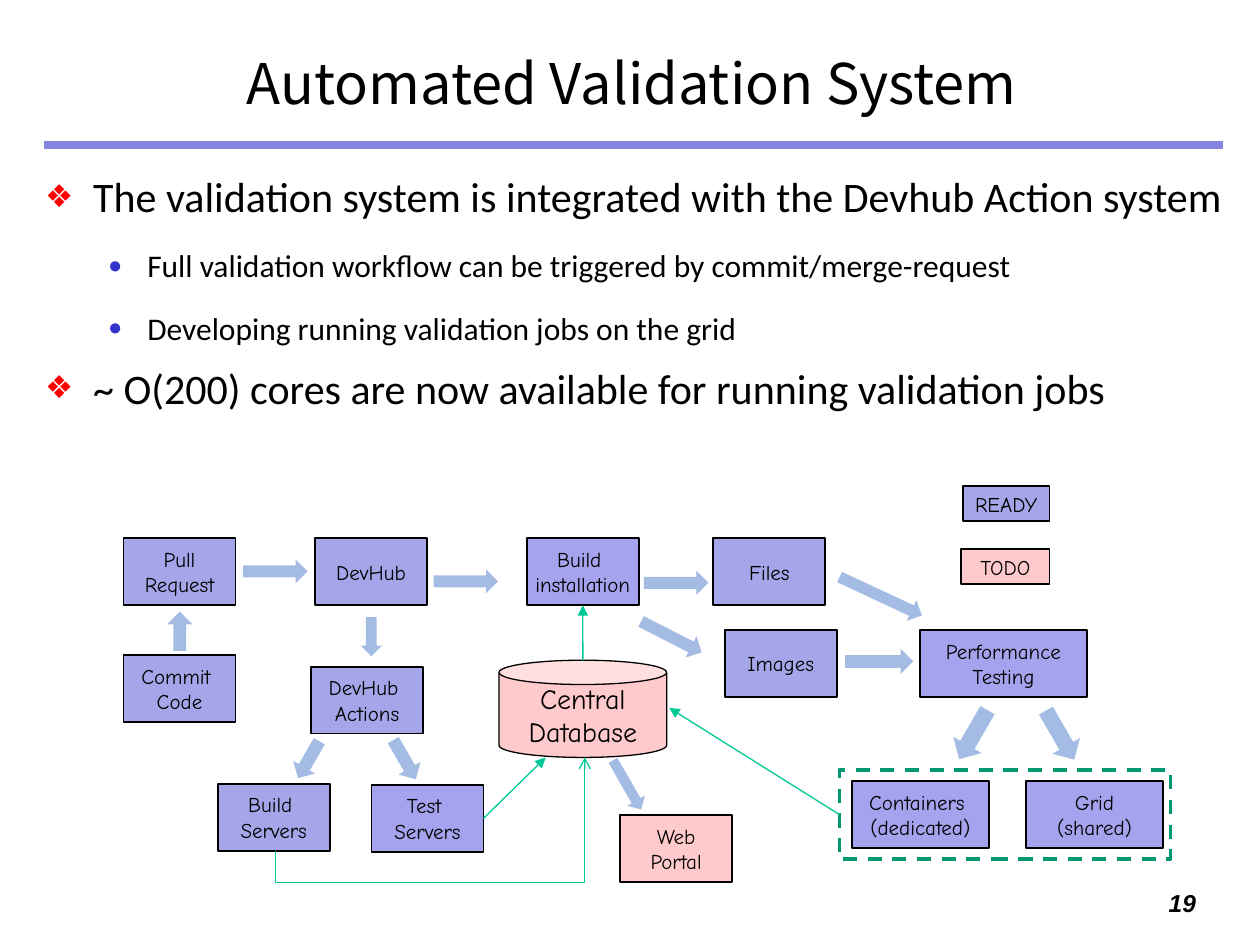
from lxml import etree
from pptx import Presentation
from pptx.dml.color import RGBColor
from pptx.enum.dml import MSO_LINE
from pptx.enum.shapes import MSO_CONNECTOR, MSO_SHAPE
from pptx.enum.text import MSO_ANCHOR, PP_ALIGN
from pptx.oxml.ns import qn
from pptx.util import Cm, Pt

RECT, CAN, ARROW = MSO_SHAPE.RECTANGLE, MSO_SHAPE.CAN, MSO_SHAPE.RIGHT_ARROW
LINE, ELBOW = MSO_CONNECTOR.STRAIGHT, MSO_CONNECTOR.ELBOW
TOP, MID, LOW = MSO_ANCHOR.TOP, MSO_ANCHOR.MIDDLE, MSO_ANCHOR.BOTTOM
LEFT, MIDST, RIGHT = PP_ALIGN.LEFT, PP_ALIGN.CENTER, PP_ALIGN.RIGHT

BLACK = RGBColor(0, 0, 0)
RULE = RGBColor(0x85, 0x85, 0xE0)
BLUE = RGBColor(0xA5, 0xA5, 0xE9)
VIOLET = RGBColor(0xA6, 0xA3, 0xEE)
PINK = RGBColor(0xFF, 0xCA, 0xCB)
SKY = RGBColor(0xA4, 0xBB, 0xE4)
GREEN = RGBColor(0x00, 0xC8, 0x96)
DARK = RGBColor(0x00, 0x97, 0x71)

# Content
TITLE = "Automated Validation System"
BODY = [  # level, space before, text
    (0, 0, "The validation system is integrated with the Devhub Action system"),
    (1, 12, "Full validation workflow can be triggered by commit/merge-request"),
    (1, 12, "Developing running validation jobs on the grid"),
    (0, 12, "~ O(200) cores are now available for running validation jobs"),
]
LEVELS = [
    dict(size=24, space=0.9, left=0.97, hang=0.97, mark="❖", color="FF0000"),
    dict(size=18, space=1.1, left=2.06, hang=0.79, mark="●", color="3333CC"),
]
W, H = 2.26, 1.35  # usual box size
ROW = 10.85        # top of the first row
BOXES = {  # name: lines, left, top, width, height, fill, line width
    "pull": (["Pull", "Request"], 2.49, ROW, W, H, BLUE, 1),
    "hub": (["DevHub"], 6.35, ROW, W, H, BLUE, 1),
    "build": (["Build ", "installation"], 10.62, ROW, W, H, VIOLET, 1),
    "files": (["Files"], 14.38, ROW, W, H, BLUE, 1),
    "code": (["Commit ", "Code"], 2.49, 13.21, W, H, BLUE, 1),
    "acts": (["DevHub ", "Actions"], 6.27, 13.44, W, H, BLUE, 1),
    "image": (["Images"], 14.61, 12.7, W, H, BLUE, 1),
    "perf": (["Performance", "Testing"], 18.54, 12.7, 3.38, H, VIOLET, 1),
    "make": (["Build ", "Servers"], 4.39, 15.8, W, H, BLUE, 1),
    "test": (["Test ", "Servers"], 7.49, 15.82, W, H, VIOLET, 1),
    "web": (["Web", "Portal"], 12.5, 16.43, W, H, PINK, 0.75),
    "pods": (["Containers ", "(dedicated)"], 17.17, 15.75, 2.77, H, VIOLET, 1),
    "grid": (["Grid", "(shared)"], 20.68, 15.75, 2.77, H, VIOLET, 1),
    "ready": (["READY"], 19.41, 9.8, 1.75, 0.71, BLUE, 1),
    "todo": (["TODO"], 19.38, 11.07, 1.78, 0.71, PINK, 1),
}
ARROWS = [  # left, top, width, height, turn
    (4.9, 11.28, 1.3, 0.48, 0),
    (8.74, 11.48, 1.3, 0.48, 0),
    (12.98, 11.51, 1.3, 0.48, 0),
    (17.04, 13.08, 1.37, 0.51, 0),
    (7.09, 12.62, 0.79, 0.43, 90),
    (3.23, 12.47, 0.79, 0.51, 270),
    (16.84, 11.79, 1.83, 0.46, 25),
    (12.85, 12.6, 1.37, 0.48, 27),
    (20.8, 14.5, 1.14, 0.64, 60),
    (19.05, 14.48, 1.14, 0.66, 120),
    (12.07, 15.62, 1.14, 0.41, 60),
    (5.79, 15.06, 0.86, 0.51, 120),
    (7.7, 15.06, 0.91, 0.51, 60),
]


def write(shape, lines, anchor, align, wrap=True, **font):
    frame = shape.text_frame
    frame.word_wrap, frame.vertical_anchor = wrap, anchor
    frame.text = "\n".join(lines)
    for para in frame.paragraphs:
        para.alignment = align
        run = para.runs[0]
        run.font.color.rgb = BLACK
        for key, value in font.items():
            setattr(run.font, key, value)
    return frame


def draw(kind, left, top, width, height, fill=None, line=None, weight=1):
    shape = slide.shapes.add_shape(kind, Cm(left), Cm(top), Cm(width), Cm(height))
    shape.shadow.inherit = False
    for part, color in ((shape.fill, fill), (shape.line.fill, line)):
        if color is None:
            part.background()
        else:
            part.solid()
            part.fore_color.rgb = color
    if line is not None:
        shape.line.width = Pt(weight)
    return shape


def link(x1, y1, x2, y2, color=GREEN, weight=0.75, tip="triangle", kind=LINE):
    wire = slide.shapes.add_connector(kind, Cm(x1), Cm(y1), Cm(x2), Cm(y2))
    wire.line.color.rgb, wire.line.width = color, Pt(weight)
    if tip:
        etree.SubElement(wire.line._get_or_add_ln(), qn("a:tailEnd"), type=tip)
    etree.SubElement(wire._element.spPr, qn("a:effectLst"))
    return wire


def bullet(para, left, hang, mark, color):
    props = para._p.get_or_add_pPr()
    props.set("marL", str(Cm(left)))
    props.set("indent", str(-Cm(hang)))
    tint = etree.SubElement(props, qn("a:buClr"))
    etree.SubElement(tint, qn("a:srgbClr"), val=color)
    etree.SubElement(props, qn("a:buSzPct"), val="75000")
    etree.SubElement(props, qn("a:buFont"), typeface="Arial")
    etree.SubElement(props, qn("a:buChar"), char=mark)


deck = Presentation()
deck.slide_width, deck.slide_height = Cm(25.4), Cm(19.05)
slide = deck.slides.add_slide(deck.slide_layouts[5])

# Title and rule
title = slide.shapes.title
title.left, title.top, title.width, title.height = Cm(0.86), Cm(0.64), Cm(23.77), Cm(1.83)
write(title, [TITLE], LOW, MIDST, size=Pt(32), name="Noto Sans CJK SC")
link(0.89, 2.92, 24.66, 2.92, RULE, 4.75, None)

# Bullets
body = slide.shapes.add_textbox(Cm(0.66), Cm(3.43), Cm(24.74), Cm(5.92))
frame = write(body, [row[2] for row in BODY], TOP, LEFT, name="Calibri")
for para, (level, gap, _) in zip(frame.paragraphs, BODY):
    style = LEVELS[level]
    para.level = level
    para.line_spacing, para.space_before = style["space"], Pt(gap)
    para.runs[0].font.size = Pt(style["size"])
    bullet(para, style["left"], style["hang"], style["mark"], style["color"])

# Page number
page = slide.shapes.add_textbox(Cm(19.08), Cm(17.78), Cm(5.28), Cm(1.07))
write(page, ["19"], TOP, RIGHT, size=Pt(14), name="Arial", bold=True, italic=True)

# Boxes, database and dashed frame
nodes = {}
for name, (lines, x, y, w, h, fill, weight) in BOXES.items():
    nodes[name] = draw(RECT, x, y, w, h, fill, BLACK, weight)
    write(nodes[name], lines, MID, MIDST, False, size=Pt(12), name="Comic Neue")
store = draw(CAN, 10.06, 13.31, 3.38, 1.96, PINK, BLACK, 0.75)
write(store, ["Central", "Database"], MID, MIDST, size=Pt(16), name="Comic Neue")
ring = draw(RECT, 16.92, 15.52, 6.68, 1.8, None, DARK, 2)
ring.line.dash_style = MSO_LINE.DASH

# Block arrows
for x, y, w, h, turn in ARROWS:
    draw(ARROW, x, y, w, h, SKY).rotation = turn

# Thin links to and from the database
link(9.75, 16.5, 11, 15.27).begin_connect(nodes["test"], 3)
link(16.92, 16.42, 13.49, 14.27).begin_connect(ring, 1)
link(11.75, 13.31, 11.75, 12.2).end_connect(nodes["build"], 2)

# Bent link from the build servers: laid out flat, then turned by 90 degrees
x1, y1, x2, y2 = 5.56, 17.15, 11.79, 15.27
cx, cy, dx, dy = (x1 + x2) / 2, (y1 + y2) / 2, (y1 - y2) / 2, (x2 - x1) / 2
bent = link(cx + dx, cy + dy, cx - dx, cy - dy, tip="arrow", kind=ELBOW)
shape = bent._element.spPr
shape.find(qn("a:xfrm")).set("rot", "5400000")
guide = shape.find(qn("a:prstGeom")).find(qn("a:avLst"))
etree.SubElement(guide, qn("a:gd"), name="adj1", fmla="val -33800")

deck.save("out.pptx")
